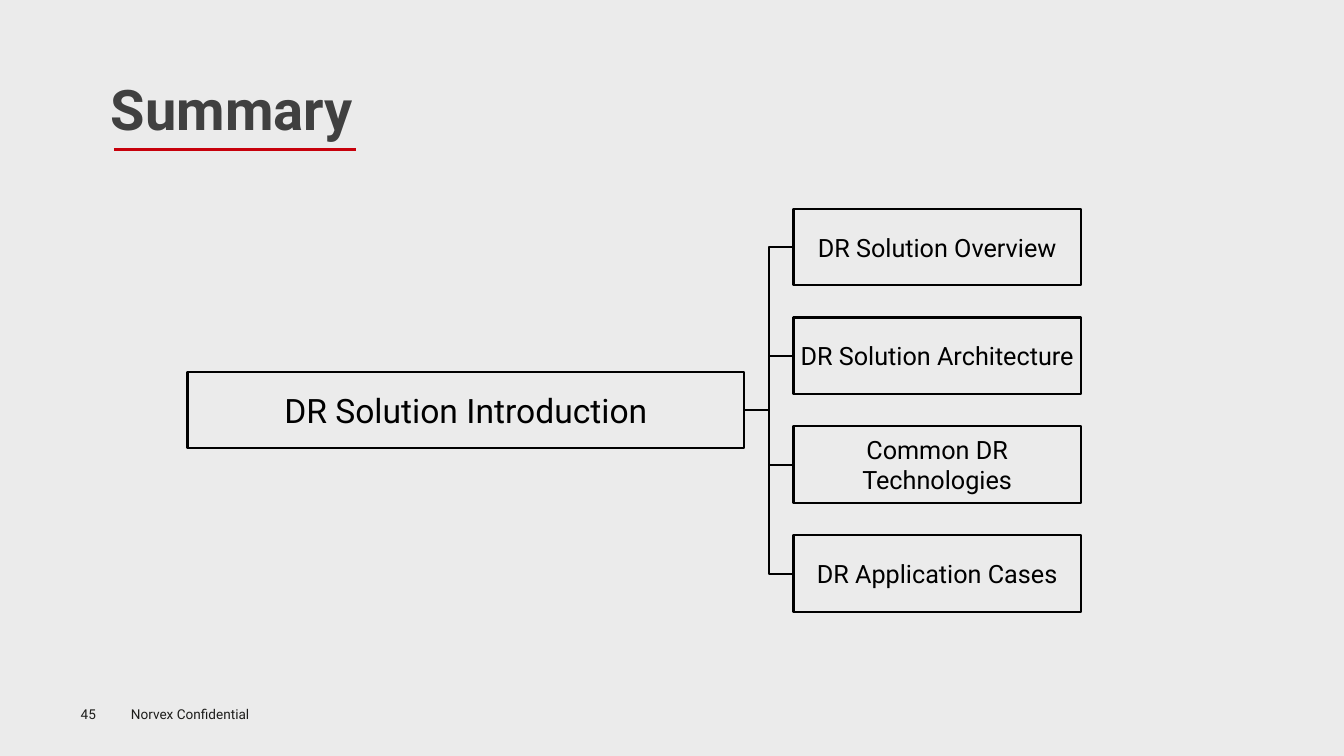
from pptx import Presentation
from pptx import util as u
from pptx.dml.color import RGBColor
from pptx.enum import shapes, text
from pptx.oxml.ns import qn
from lxml import etree

BACKGROUND = RGBColor(0xEB, 0xEB, 0xEB)
BLACK = RGBColor(0x00, 0x00, 0x00)
TITLE_GREY = RGBColor(0x40, 0x40, 0x40)
FOOTER_GREY = RGBColor(0x1D, 0x1D, 0x1B)
RED = RGBColor(0xC7, 0x00, 0x0B)

RIGHT_SITE, LEFT_SITE = 3, 1  # connection sites of a rectangle


def write_text(shape, content, size, color, font="Roboto", bold=False,
               align=text.PP_ALIGN.LEFT, anchor=text.MSO_ANCHOR.TOP,
               insets=(0.1, 0.05), wrap=True):
    frame = shape.text_frame
    frame.word_wrap = wrap
    frame.auto_size = text.MSO_AUTO_SIZE.NONE
    frame.vertical_anchor = anchor
    frame.margin_left = frame.margin_right = u.Inches(insets[0])
    frame.margin_top = frame.margin_bottom = u.Inches(insets[1])
    paragraph = frame.paragraphs[0]
    paragraph.alignment = align
    run = paragraph.add_run()
    run.text = content
    run.font.name = font
    run.font.size = u.Pt(size)
    run.font.bold = bold
    run.font.color.rgb = color


class SummarySlide:
    def __init__(self, presentation):
        self.line_color = BLACK
        self.line_width = 1.5
        self.slide = presentation.slides.add_slide(presentation.slide_layouts[5])
        fill = self.slide.background.fill
        fill.solid()
        fill.fore_color.rgb = BACKGROUND

    def title(self, content, left, top, width, height):
        shape = self.slide.shapes.title
        shape.left, shape.top = u.Inches(left), u.Inches(top)
        shape.width, shape.height = u.Inches(width), u.Inches(height)
        write_text(shape, content, 40, TITLE_GREY, bold=True, wrap=False)

    def label(self, content, left, top, width, height, **style):
        shape = self.slide.shapes.add_textbox(
            u.Inches(left), u.Inches(top), u.Inches(width), u.Inches(height))
        write_text(shape, content, 9.7, FOOTER_GREY, **style)

    def box(self, content, left, middle, width, height, size, inset):
        shape = self.slide.shapes.add_shape(
            shapes.MSO_SHAPE.RECTANGLE, u.Inches(left),
            u.Inches(middle - height / 2), u.Inches(width), u.Inches(height))
        shape.shadow.inherit = False
        shape.fill.background()
        shape.line.color.rgb = self.line_color
        shape.line.width = u.Pt(self.line_width)
        write_text(shape, content, size, BLACK, align=text.PP_ALIGN.CENTER,
                   anchor=text.MSO_ANCHOR.MIDDLE, insets=(inset, inset))
        return shape

    def connector(self, kind, start, end, color=None, width=None):
        connector = self.slide.shapes.add_connector(
            kind, *(u.Inches(value) for value in (*start, *end)))
        connector.line.color.rgb = color or self.line_color
        connector.line.width = u.Pt(width or self.line_width)
        etree.SubElement(connector.element.spPr, qn("a:effectLst"))
        return connector

    def branch(self, parent, child):
        connector = self.connector(shapes.MSO_CONNECTOR.ELBOW, (0, 0), (1, 1))
        connector.begin_connect(parent, RIGHT_SITE)
        connector.end_connect(child, LEFT_SITE)


def main():
    presentation = Presentation()
    presentation.slide_width = u.Inches(13.33)
    presentation.slide_height = u.Inches(7.5)
    summary = SummarySlide(presentation)

    # Title and its underline
    summary.title("Summary", 1, 0.69, 2.64, 0.77)
    summary.connector(shapes.MSO_CONNECTOR.STRAIGHT, (1.13, 1.48), (3.53, 1.48),
                      color=RED, width=2.25)

    # Topic tree, centred on the root
    topics = ["DR Solution Overview", "DR Solution Architecture",
              "Common DR Technologies", "DR Application Cases"]
    tree_middle, pitch = 4.07, 1.08
    root = summary.box("DR Solution Introduction", 1.86, tree_middle,
                       5.52, 0.75, size=24, inset=0.02)
    for index, topic in enumerate(topics):
        middle = tree_middle + (index - (len(topics) - 1) / 2) * pitch
        child = summary.box(topic, 7.87, middle, 2.85, 0.76, size=18, inset=0.01)
        summary.branch(root, child)

    # Footer
    summary.label("45", 0.8, 7, 0.55, 0.16, insets=(0, 0))
    summary.label("Norvex Confidential", 1.2, 6.95, 1.6, 0.27)

    presentation.save("out.pptx")


if __name__ == "__main__":
    main()
